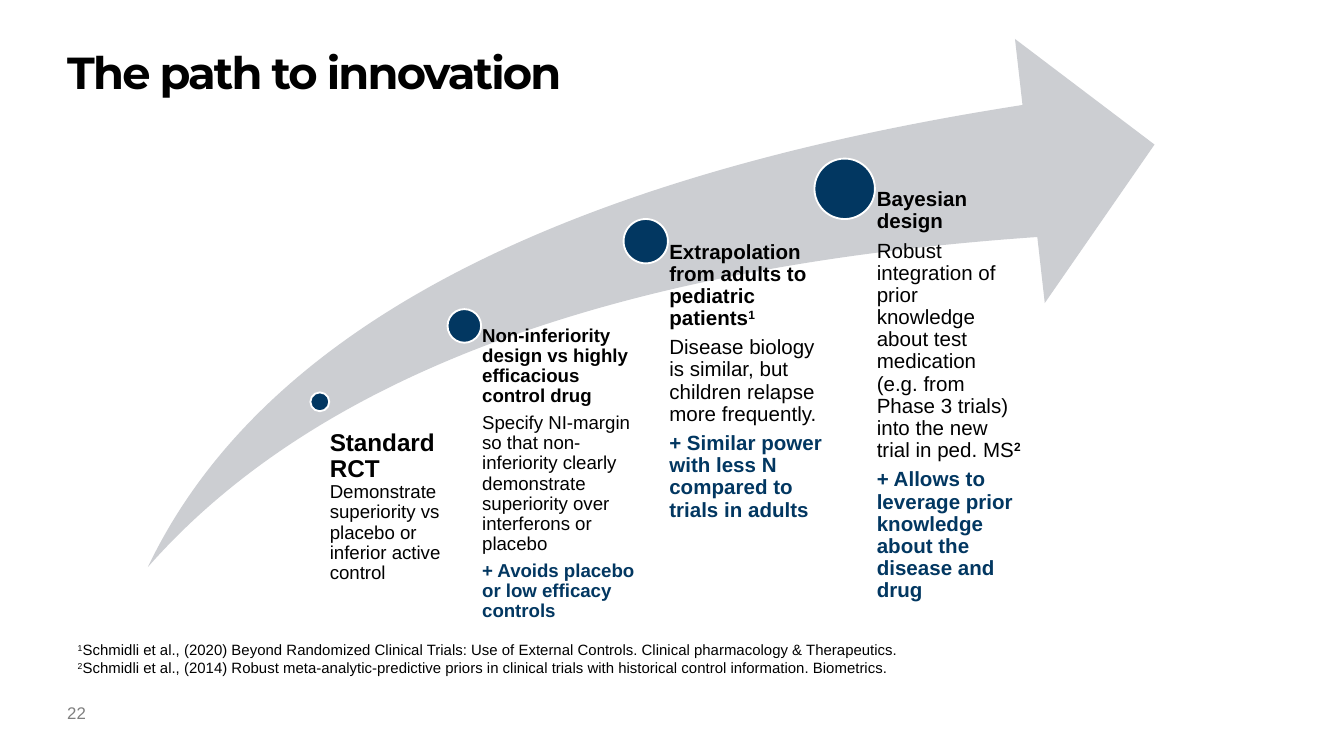
from typing import NamedTuple

from pptx import Presentation
from pptx.dml.color import RGBColor
from pptx.enum.shapes import MSO_SHAPE as Shape
from pptx.enum.text import MSO_ANCHOR as Anchor, MSO_AUTO_SIZE as Fit, PP_ALIGN as Align
from pptx.util import Inches, Pt

COLS, ROWS = 100, 56.25  # grid cells of 0.1 inch
INK = {"black": "000000", "navy": "023761", "grey": "7F7F7F",
       "arrow": "CCCED2", "white": "FFFFFF"}


class Bit(NamedTuple):
    text: str
    bold: bool = False
    ink: str = "black"
    size: float = 0  # 0 takes the size of the box
    up: bool = False


class Area(NamedTuple):
    col: float
    row: float
    wide: float
    high: float


class Stage(NamedTuple):
    col: float  # centre of the dot
    row: float
    dot: float
    wide: float
    size: float
    paras: list[list[Bit]]
    drop: float = 0  # rows from the dot's centre to the text
    foot: float = 42.3


STAGES = [
    Stage(23.8, 29.9, 1.4, 10.8, 10, [
        [Bit("Standard RCT ", True, size=13),
         Bit("Demonstrate superiority vs placebo or inferior active control")],
    ], drop=2.1, foot=41.4),
    Stage(34.55, 24.25, 2.5, 13.2, 10, [
        [Bit("Non-inferiority design vs highly efficacious control drug", True)],
        [Bit("Specify NI-margin so that non-inferiority clearly demonstrate "
             "superiority over interferons or placebo")],
        [Bit("+ Avoids placebo or low efficacy controls", True, "navy")],
    ]),
    Stage(48.05, 17.95, 3.3, 13.2, 11, [
        [Bit("Extrapolation from adults to pediatric patients", True),
         Bit("1", True, up=True)],
        [Bit("Disease biology is similar, but children relapse more frequently.")],
        [Bit("+ Similar power with less N compared to trials in adults", True, "navy")],
    ]),
    Stage(62.85, 14.05, 4.5, 13.2, 11, [
        [Bit("Bayesian design", True)],
        [Bit("Robust integration of prior knowledge about test medication "
             "(e.g. from Phase 3 trials) into the new trial in ped. MS"),
         Bit("2", True, up=True)],
        [Bit("+ Allows to leverage prior knowledge about the disease and drug",
             True, "navy")],
    ]),
]

NOTES = [
    [Bit("1", up=True),
     Bit("Schmidli et al., (2020) Beyond Randomized Clinical Trials: Use of "
         "External Controls. Clinical pharmacology & Therapeutics.")],
    [Bit("2", up=True),
     Bit("Schmidli et al., (2014) Robust meta‐analytic‐predictive priors in "
         "clinical trials with historical control information. Biometrics.")],
]


def cells(count: float) -> int:
    return Inches(count / 10)


def tint(name: str) -> RGBColor:
    return RGBColor.from_string(INK[name])


def place(shape, area: Area) -> None:
    shape.left, shape.top, shape.width, shape.height = map(cells, area)


def write(frame, paras: list[list[Bit]], size: float, face: str = "Arial",
          line: float = 1, gap: float = 0) -> None:
    """Fill a frame; gap is the space after, as a share of the text size."""
    frame.word_wrap = True
    frame.vertical_anchor = Anchor.TOP
    for i, bits in enumerate(paras):
        para = frame.add_paragraph() if i else frame.paragraphs[0]
        para.alignment = Align.LEFT
        para.line_spacing = line
        para.space_after = Pt(gap * size)
        for bit in bits:
            run = para.add_run()
            run.text = bit.text
            font = run.font
            font.name, font.size, font.bold = face, Pt(bit.size or size), bit.bold
            font.color.rgb = tint(bit.ink)
            if bit.up:
                run._r.get_or_add_rPr().set("baseline", "30000")


def pad(frame, left: float = 0) -> None:
    """Clear all insets but the left one."""
    frame.margin_left = cells(left)
    frame.margin_top = frame.margin_right = frame.margin_bottom = 0


def add_box(slide, area: Area):
    return slide.shapes.add_textbox(*map(cells, area)).text_frame


def add_form(slide, kind: Shape, area: Area, ink: str):
    form = slide.shapes.add_shape(kind, *map(cells, area))
    form.shadow.inherit = False
    form.fill.solid()
    form.fill.fore_color.rgb = tint(ink)
    form.line.fill.background()
    return form


def add_title(slide, text: str) -> None:
    title = slide.shapes.title
    place(title, Area(5, 3.8, 90, 10.5))
    frame = title.text_frame
    frame.auto_size = Fit.NONE
    pad(frame)
    write(frame, [[Bit(text, True)]], 24, "Montserrat", 0.9)
    frame.paragraphs[0].runs[0]._r.get_or_add_rPr().set("spc", "-100")


def add_stage(slide, stage: Stage) -> None:
    half = stage.dot / 2
    dot = add_form(slide, Shape.OVAL,
                   Area(stage.col - half, stage.row - half, stage.dot, stage.dot), "navy")
    dot.line.color.rgb = tint("white")
    dot.line.width = Pt(1)
    top = stage.row + stage.drop
    frame = add_box(slide, Area(stage.col, top, stage.wide, stage.foot - top))
    pad(frame, 0.53 * stage.dot)
    write(frame, stage.paras, stage.size, line=0.9, gap=0.35)


def main() -> None:
    deck = Presentation()
    deck.slide_width, deck.slide_height = cells(COLS), cells(ROWS)
    slide = deck.slides.add_slide(deck.slide_layouts[5])
    add_title(slide, "The path to innovation")

    page = add_box(slide, Area(5, 52.3, 2.5, 2.5))
    pad(page)
    write(page, [[Bit("22", ink="grey")]], 9)

    arrow = add_form(slide, Shape.SWOOSH_ARROW, Area(11, 2.9, 74.9, 39.3), "arrow")
    arrow.adjustments[0] = arrow.adjustments[1] = 0.25
    for stage in STAGES:
        add_stage(slide, stage)

    notes = add_box(slide, Area(4.8, 47.2, 87.2, 3.7))
    notes.auto_size = Fit.SHAPE_TO_FIT_TEXT
    write(notes, NOTES, 8)
    deck.save("out.pptx")


if __name__ == "__main__":
    main()
